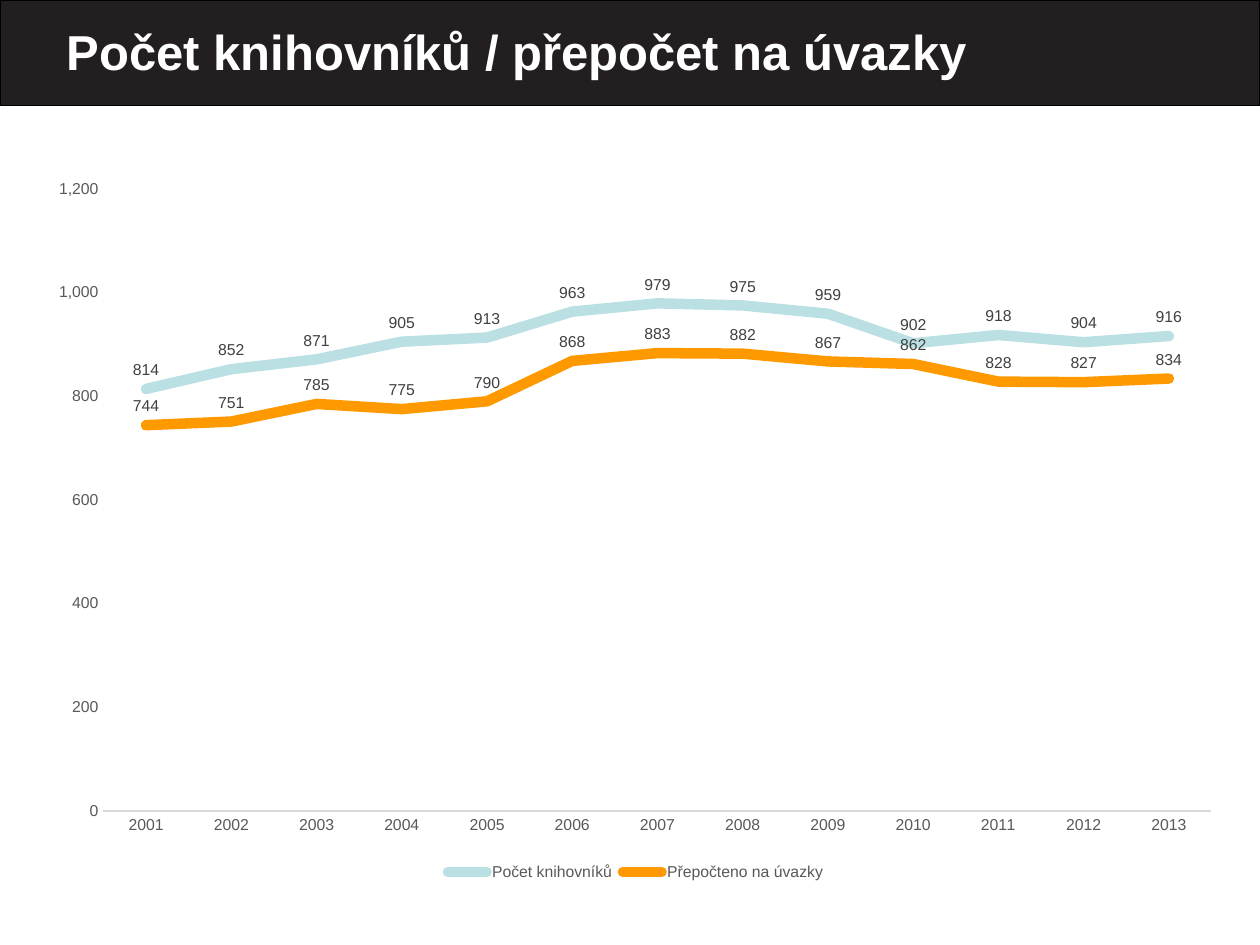
from pptx import Presentation
from pptx.chart.data import CategoryChartData
from pptx.dml.color import RGBColor
from pptx.enum.chart import XL_CHART_TYPE, XL_LABEL_POSITION, XL_LEGEND_POSITION, XL_MARKER_STYLE, XL_TICK_MARK
from pptx.enum.shapes import MSO_SHAPE
from pptx.enum.text import MSO_ANCHOR, MSO_AUTO_SIZE, PP_ALIGN
from pptx.util import Pt

TITLE = "Počet knihovníků / přepočet na úvazky"
YEARS = [str(year) for year in range(2001, 2014)]
SERIES = [
    ("Počet knihovníků", "librarians",
     [814, 852, 871, 905, 913, 963, 979, 975, 959, 902, 918, 904, 916]),
    ("Přepočteno na úvazky", "full_time",
     [744, 751, 785, 775, 790, 868, 883, 882, 867, 862, 828, 827, 834]),
]
COLORS = {
    "band": "231F20", "band_edge": "000000", "title": "FFFFFF",
    "librarians": "BBE0E3", "full_time": "FF9900",
    "axis_line": "D9D9D9", "axis_text": "595959", "label": "404040",
}
FONT = "Arial"
WIDTH, HEIGHT = 720, 540


def color(name):
    """Return the named colour."""
    return RGBColor.from_string(COLORS[name])


def style(font, size, name):
    """Set typeface, size and colour of a font."""
    font.name = FONT
    font.size = Pt(size)
    font.color.rgb = color(name)


def paint(fill, name):
    """Fill with a solid named colour."""
    fill.solid()
    fill.fore_color.rgb = color(name)


def add_heading(slide):
    """Format the title and put the dark band behind it."""
    title = slide.shapes.title
    title.left, title.top, title.width, title.height = Pt(31), Pt(3.6), Pt(648), Pt(51)
    frame = title.text_frame
    frame.word_wrap = True
    frame.auto_size = MSO_AUTO_SIZE.NONE
    frame.vertical_anchor = MSO_ANCHOR.MIDDLE
    paragraph = frame.paragraphs[0]
    paragraph.alignment = PP_ALIGN.LEFT
    run = paragraph.add_run()
    run.text = TITLE
    run.font.bold = True
    style(run.font, 28, "title")

    band = slide.shapes.add_shape(MSO_SHAPE.RECTANGLE, 0, 0, Pt(WIDTH), Pt(60.4))
    band.shadow.inherit = False
    paint(band.fill, "band")
    band.line.color.rgb = color("band_edge")
    band.line.width = Pt(0.75)
    title.element.addprevious(band.element)


def add_staff_chart(slide):
    """Add the line chart of staff numbers by year."""
    data = CategoryChartData(number_format="0")
    data.categories = YEARS
    for name, _, values in SERIES:
        data.add_series(name, values)
    chart = slide.shapes.add_chart(
        XL_CHART_TYPE.LINE_MARKERS, Pt(20), Pt(94.4), Pt(686), Pt(412), data).chart
    chart.has_title = False
    style(chart.font, 10, "axis_text")
    chart.has_legend = True
    chart.legend.position = XL_LEGEND_POSITION.BOTTOM
    chart.legend.include_in_layout = False
    style(chart.legend.font, 9, "axis_text")

    years, counts = chart.category_axis, chart.value_axis
    for axis in (years, counts):
        axis.major_tick_mark = axis.minor_tick_mark = XL_TICK_MARK.NONE
        axis.has_major_gridlines = False
        style(axis.tick_labels.font, 9, "axis_text")
    years.format.line.color.rgb = color("axis_line")
    years.format.line.width = Pt(0.75)
    counts.format.line.fill.background()
    counts.minimum_scale, counts.maximum_scale, counts.major_unit = 0, 1200, 200
    counts.tick_labels.number_format = "#,##0"
    counts.tick_labels.number_format_is_linked = False

    plot = chart.plots[0]
    plot.vary_by_categories = False
    for staff, (_, tint, _) in zip(plot.series, SERIES):
        staff.smooth = False
        staff.format.line.color.rgb = color(tint)
        staff.format.line.width = Pt(6)
        staff.format.line._get_or_add_ln().set("cap", "rnd")
        staff.marker.style = XL_MARKER_STYLE.CIRCLE
        staff.marker.size = 5
        paint(staff.marker.format.fill, tint)
        staff.marker.format.line.color.rgb = color(tint)
        labels = staff.data_labels
        labels.show_value = True
        labels.position = XL_LABEL_POSITION.ABOVE
        labels.number_format = "0"
        labels.number_format_is_linked = False
        style(labels.font, 9, "label")


def main():
    """Build and save the slide."""
    deck = Presentation()
    deck.slide_width, deck.slide_height = Pt(WIDTH), Pt(HEIGHT)
    slide = deck.slides.add_slide(deck.slide_layouts[5])
    add_heading(slide)
    add_staff_chart(slide)
    deck.save("out.pptx")


if __name__ == "__main__":
    main()
